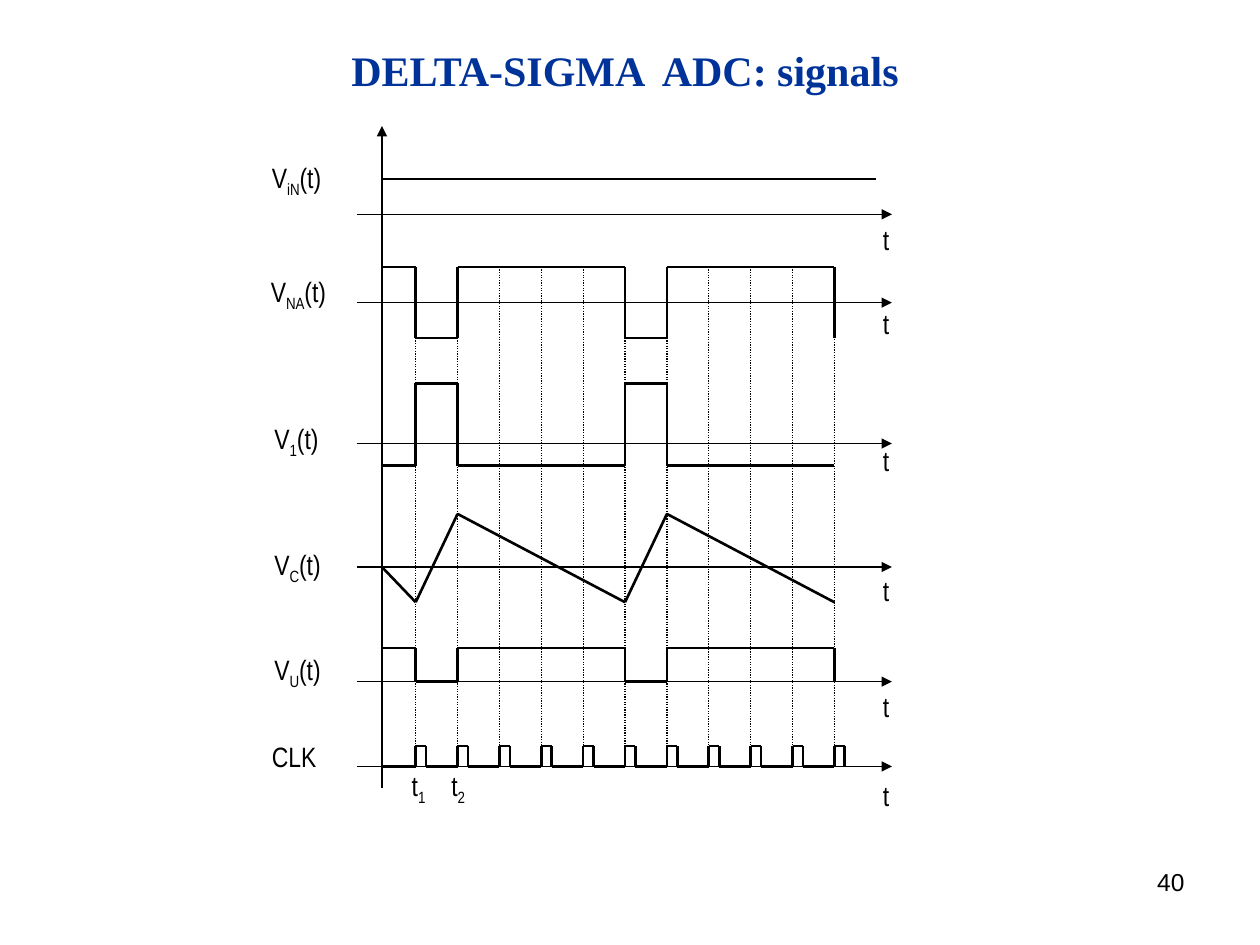
from dataclasses import dataclass
from itertools import pairwise

from lxml.etree import SubElement
from pptx import Presentation
from pptx.dml.color import RGBColor
from pptx.enum.dml import MSO_LINE_DASH_STYLE as Dash
from pptx.enum.shapes import MSO_CONNECTOR as Conn
from pptx.enum.text import MSO_ANCHOR as Anchor, MSO_AUTO_SIZE as AutoSize, PP_ALIGN as Align
from pptx.oxml.ns import qn
from pptx.util import Cm, Pt

COLORS = {"title": "003399", "ink": "000000"}
LABEL_FONT = "Arial Narrow"
ORIGIN_X = 7.7
AXIS_START, AXIS_END = 7.19, 17.98
TIME_LEFT = 17.55
TICKS = [8.38 + 0.844 * i for i in range(11)]
SWITCH_TICKS = (0, 1, 5, 6)
PULSE_WIDTH = 0.21

Point = tuple[float, float]


@dataclass
class Signal:
    label: str
    left: float
    top: float
    width: float
    axis_y: float
    time_top: float
    wave: list[Point]


def square(start: float, other: float, end: float) -> list[Point]:
    points = [(ORIGIN_X, start)]
    level = start
    for tick in SWITCH_TICKS:
        points.append((TICKS[tick], level))
        level = other if level == start else start
        points.append((TICKS[tick], level))
    points.append((TICKS[-1], level))
    if end != level:
        points.append((TICKS[-1], end))
    return points


def sawtooth(middle: float, low: float, peak: float) -> list[Point]:
    levels = (low, peak, low, peak, low)
    ticks = (*SWITCH_TICKS, len(TICKS) - 1)
    return [(ORIGIN_X, middle), *((TICKS[t], y) for t, y in zip(ticks, levels))]


def clock(low: float, high: float) -> list[Point]:
    points = [(ORIGIN_X, low)]
    for x in TICKS:
        fall = x + PULSE_WIDTH
        points += [(x, low), (x, high), (fall, high), (fall, low)]
    return points


def add_line(slide, start: Point, end: Point, width: float = 0.75,
             dash=None, arrow: bool = False) -> None:
    sp = slide.shapes.add_connector(
        Conn.STRAIGHT, *(Cm(value) for value in (*start, *end)))
    sp.line.color.rgb = RGBColor.from_string(COLORS["ink"])
    sp.line.width = Pt(width)
    if dash is not None:
        sp.line.dash_style = dash
    if arrow:
        SubElement(sp.line._get_or_add_ln(), qn("a:tailEnd"), type="triangle")
    SubElement(sp._element.spPr, qn("a:effectLst"))


def add_wave(slide, points: list[Point]) -> None:
    for start, end in pairwise(points):
        add_line(slide, start, end, width=1.5)


def write(sp, text: str, *, size: float = 16, font: str = LABEL_FONT,
          color: str = "ink", bold: bool = False, align=Align.LEFT,
          wrap: bool = True, tab: float | None = None) -> None:
    tf = sp.text_frame
    tf.word_wrap = wrap
    tf.auto_size = AutoSize.NONE
    tf.vertical_anchor = Anchor.TOP
    p = tf.paragraphs[0]
    p.alignment = align
    if tab is not None:
        tabs = SubElement(p._p.get_or_add_pPr(), qn("a:tabLst"))
        SubElement(tabs, qn("a:tab"), pos=str(Cm(tab)), algn="l")
    for i, part in enumerate(text.split("_")):
        if not part:
            continue
        r = p.add_run()
        r.text = part
        r.font.size = Pt(size)
        r.font.name = font
        r.font.bold = bold
        r.font.color.rgb = RGBColor.from_string(COLORS[color])
        if i % 2:
            r._r.get_or_add_rPr().set("baseline", "-25000")


def add_text(slide, text: str, left: float, top: float, width: float,
             height: float = 0.94, **style) -> None:
    box = slide.shapes.add_textbox(Cm(left), Cm(top), Cm(width), Cm(height))
    write(box, text, **style)


def add_signal(slide, signal: Signal) -> None:
    add_line(slide, (AXIS_START, signal.axis_y), (AXIS_END, signal.axis_y), arrow=True)
    add_wave(slide, signal.wave)
    add_text(slide, signal.label, signal.left, signal.top, signal.width, wrap=False)
    add_text(slide, "t", TIME_LEFT, signal.time_top, 0.64, wrap=False)


SIGNALS = [
    Signal("V_iN_(t)", 5.23, 3.12, 1.55, 4.32, 4.37, [(ORIGIN_X, 3.61), (17.65, 3.61)]),
    Signal("V_NA_(t)", 5.21, 5.41, 1.7, 6.1, 6.05, square(5.38, 6.81, 6.81)),
    Signal("V_1_(t)", 5.28, 8.38, 1.42, 8.94, 8.81, square(9.39, 7.73, 9.39)),
    Signal("V_C_(t)", 5.28, 10.92, 1.5, 11.43, 11.43, sawtooth(11.43, 12.14, 10.36)),
    Signal("V_U_(t)", 5.28, 13.03, 1.5, 13.74, 13.77, square(13.06, 13.74, 13.74)),
    Signal("CLK", 5.23, 14.78, 1.42, 15.45, 15.57, clock(15.45, 15.04)),
]


def main() -> None:
    prs = Presentation()
    prs.slide_width, prs.slide_height = Cm(25.4), Cm(19.05)
    slide = prs.slides.add_slide(prs.slide_layouts[5])

    title = slide.shapes.title
    title.left, title.top, title.width, title.height = Cm(6.83), Cm(0.76), Cm(11.79), Cm(1.27)
    write(title, "DELTA-SIGMA  ADC: signals", size=24, font="Times New Roman",
          color="title", bold=True, wrap=False)

    add_line(slide, (ORIGIN_X, 15.88), (ORIGIN_X, 2.54), arrow=True)
    for i, x in enumerate(TICKS):
        top = 6.81 if i in SWITCH_TICKS else 5.38
        add_line(slide, (x, top), (x, 15.4), dash=Dash.ROUND_DOT)
    for signal in SIGNALS:
        add_signal(slide, signal)

    add_text(slide, "t_1\t_t_2", 8.05, 15.37, 2.34, tab=0.8)
    add_text(slide, "40", 18.21, 17.35, 5.92, 1.32, size=14, font="Arial", align=Align.RIGHT)
    prs.save("out.pptx")


if __name__ == "__main__":
    main()
